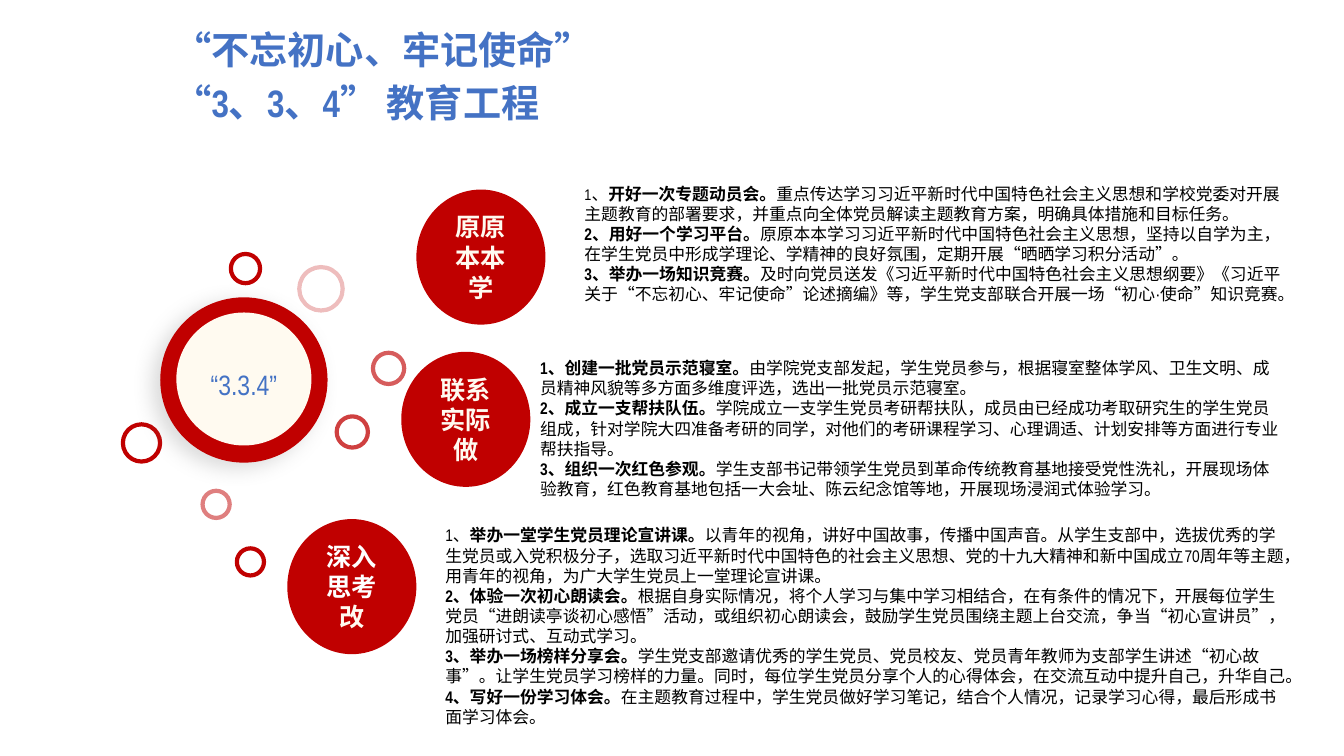
import pptx
import pptx.util
import pptx.dml.color
import pptx.enum.shapes
import pptx.enum.text
import pptx.oxml
import pptx.oxml.ns

COLORS = {"red": "C00000", "cream": "FFFAF0", "blue": "4472C4", "black": "000000",
          "white": "FFFFFF", "shadow": "A6A6A6"}
LATIN, CHINESE = "Arial Narrow", "Noto Sans CJK SC"
BOLD, PLAIN = {"bold": True}, {"bold": False}

TITLE = [[("“不忘初心、牢记使命”", BOLD)], [("“3、3、4” 教育工程", BOLD)]]
CENTER = [[("“3.3.4”", PLAIN)]]

RINGS = [
    (213.8, 190.8, 31, 25),
    (240.5, 297.4, 22.3, 75),
    (169.2, 391.7, 19.4, 100),
    (144.7, 350.6, 19.4, 50),
    (87.8, 303.1, 26.6, 100),
    (266.4, 252, 22.3, 63),
    (164.9, 181.4, 20.9, 100),
]

STAGES = [
    {
        "disc": (297.4, 135.4),
        "label": [[("原原本本学", {})]],
        "box": (410.4, 127.4, 519.8, 94.3),
        "tasks": [
            [("1", {"size": 11}), ("、", PLAIN), ("开好一次专题动员会。", BOLD),
             ("重点传达学习习近平新时代中国特色社会主义思想和学校党委对开展主题教育的部署要求，"
              "并重点向全体党员解读主题教育方案，明确具体措施和目标任务。", PLAIN)],
            [("2、用好一个学习平台。", BOLD),
             ("原原本本学习习近平新时代中国特色社会主义思想，坚持以自学为主，"
              "在学生党员中形成学理论、学精神的良好氛围，定期开展“晒晒学习积分活动”。", PLAIN)],
            [("3、举办一场知识竞赛。", BOLD),
             ("及时向党员送发《习近平新时代中国特色社会主义思想纲要》《习近平关于“不忘初心、"
              "牢记使命”论述摘编》等，学生党支部联合开展一场“初心·使命”知识竞赛。", PLAIN)],
        ],
    },
    {
        "disc": (286.6, 251.3),
        "label": [[("联系实际", {})], [("做", {})]],
        "box": (378.7, 252, 545.8, 108.7),
        "tasks": [
            [("1、创建一批党员示范寝室。", BOLD),
             ("由学院党支部发起，学生党员参与，根据寝室整体学风、卫生文明、"
              "成员精神风貌等多方面多维度评选，选出一批党员示范寝室。", PLAIN)],
            [("2、成立一支帮扶队伍。", BOLD),
             ("学院成立一支学生党员考研帮扶队，成员由已经成功考取研究生的学生党员组成，"
              "针对学院大四准备考研的同学，对他们的考研课程学习、心理调适、"
              "计划安排等方面进行专业帮扶指导。", PLAIN)],
            [("3、组织一次红色参观。", BOLD),
             ("学生支部书记带领学生党员到革命传统教育基地接受党性洗礼，开展现场体验教育，"
              "红色教育基地包括一大会址、陈云纪念馆等地，开展现场浸润式体验学习。", PLAIN)],
        ],
    },
    {
        "disc": (205.2, 370.8),
        "label": [[("深入思考", {"color": "white", "latin": LATIN})], [("改", {})]],
        "box": (311, 371.5, 618.5, 152.6),
        "tasks": [
            [("1、", PLAIN), ("举办一堂学生党员理论宣讲课。", BOLD),
             ("以青年的视角，讲好中国故事，传播中国声音。从学生支部中，"
              "选拔优秀的学生党员或入党积极分子，选取习近平新时代中国特色的社会主义思想、"
              "党的十九大精神和新中国成立70周年等主题，用青年的视角，"
              "为广大学生党员上一堂理论宣讲课。", PLAIN)],
            [("2、体验一次初心朗读会。", BOLD),
             ("根据自身实际情况，将个人学习与集中学习相结合，在有条件的情况下，"
              "开展每位学生党员“进朗读亭谈初心感悟”活动，或组织初心朗读会，"
              "鼓励学生党员围绕主题上台交流，争当“初心宣讲员”，加强研讨式、互动式学习。", PLAIN)],
            [("3、举办一场榜样分享会。", BOLD),
             ("学生党支部邀请优秀的学生党员、党员校友、党员青年教师为支部学生讲述“初心故事”。"
              "让学生党员学习榜样的力量。同时，每位学生党员分享个人的心得体会，"
              "在交流互动中提升自己，升华自己。", PLAIN)],
            [("4、写好一份学习体会。", BOLD),
             ("在主题教育过程中，学生党员做好学习笔记，结合个人情况，记录学习心得，"
              "最后形成书面学习体会。", PLAIN)],
        ],
    },
]
DISC_SIZE = (92.2, 96.5)


def points(values):
    return [pptx.util.Pt(value) for value in values]


def rgb(name):
    return pptx.dml.color.RGBColor.from_string(COLORS[name])


def write_text(shape, paragraphs, size=12, color="black", latin=LATIN, bold=False,
               align="LEFT", anchor="TOP", margins=(7.2, 3.6), gap=0, line_spacing=None):
    frame = shape.text_frame
    frame.word_wrap = True
    frame.auto_size = pptx.enum.text.MSO_AUTO_SIZE.NONE
    frame.vertical_anchor = getattr(pptx.enum.text.MSO_ANCHOR, anchor)
    horizontal, vertical = points(margins)
    frame.margin_left = frame.margin_right = horizontal
    frame.margin_top = frame.margin_bottom = vertical
    for index, runs in enumerate(paragraphs):
        paragraph = frame.add_paragraph() if index else frame.paragraphs[0]
        paragraph.alignment = getattr(pptx.enum.text.PP_ALIGN, align)
        paragraph.space_before = pptx.util.Pt(gap if index else 0)
        if line_spacing:
            paragraph.line_spacing = line_spacing
        for text, changes in runs:
            style = {"size": size, "color": color, "latin": latin, "bold": bold, **changes}
            run = paragraph.add_run()
            run.text = text
            run.font.size = pptx.util.Pt(style["size"])
            run.font.bold = style["bold"]
            run.font.color.rgb = rgb(style["color"])
            run.font.name = style["latin"]
            properties = run.font._element
            properties.set("lang", "zh-CN")
            east_asian = properties.makeelement(pptx.oxml.ns.qn("a:ea"), {"typeface": CHINESE})
            properties.append(east_asian)


def add_ellipse(slide, box, fill=None, opacity=100):
    shape = slide.shapes.add_shape(pptx.enum.shapes.MSO_SHAPE.OVAL, *points(box))
    shape.shadow.inherit = False
    if fill:
        shape.fill.solid()
        shape.fill.fore_color.rgb = rgb(fill)
        shape.line.fill.background()
        return shape
    shape.fill.background()
    shape.line.width = pptx.util.Pt(3)
    shape.line.color.rgb = rgb("red")
    if opacity < 100:
        color = shape.line._ln.find(".//" + pptx.oxml.ns.qn("a:srgbClr"))
        alpha = color.makeelement(pptx.oxml.ns.qn("a:alpha"), {"val": str(opacity * 1000)})
        color.append(alpha)
    return shape


def add_soft_shadow(shape):
    effects = shape._element.spPr.find(pptx.oxml.ns.qn("a:effectLst"))
    effects.append(pptx.oxml.parse_xml(
        f'<a:outerShdw {pptx.oxml.ns.nsdecls("a")} blurRad="{pptx.util.Pt(14)}" '
        f'dist="{pptx.util.Pt(7)}" dir="{150 * 60000}" algn="ctr" rotWithShape="0">'
        f'<a:srgbClr val="{COLORS["shadow"]}"><a:alpha val="40000"/></a:srgbClr></a:outerShdw>'))


def main():
    presentation = pptx.Presentation()
    presentation.slide_width, presentation.slide_height = points((960, 540))
    slide = presentation.slides.add_slide(presentation.slide_layouts[5])

    title = slide.shapes.title
    title.left, title.top, title.width, title.height = points((114.5, 13.7, 462.2, 77.8))
    write_text(title, TITLE, size=27.3, color="blue", margins=(9.4, 5), gap=5.5)

    for left, top, diameter, opacity in RINGS:
        add_ellipse(slide, (left, top, diameter, diameter), opacity=opacity)

    add_soft_shadow(add_ellipse(slide, (114.5, 212.4, 119.5, 118.1), fill="red"))
    center = add_ellipse(slide, (126, 223.2, 96.5, 95), fill="cream")
    write_text(center, CENTER, size=20, color="blue", align="CENTER", anchor="MIDDLE",
               margins=(0, 0), line_spacing=1.3)

    for stage in STAGES:
        disc = add_ellipse(slide, stage["disc"] + DISC_SIZE, fill="red")
        write_text(disc, stage["label"], size=18, color="cream", latin=CHINESE, bold=True,
                   align="CENTER", anchor="MIDDLE")
        write_text(slide.shapes.add_textbox(*points(stage["box"])), stage["tasks"])

    presentation.save("out.pptx")


if __name__ == "__main__":
    main()
